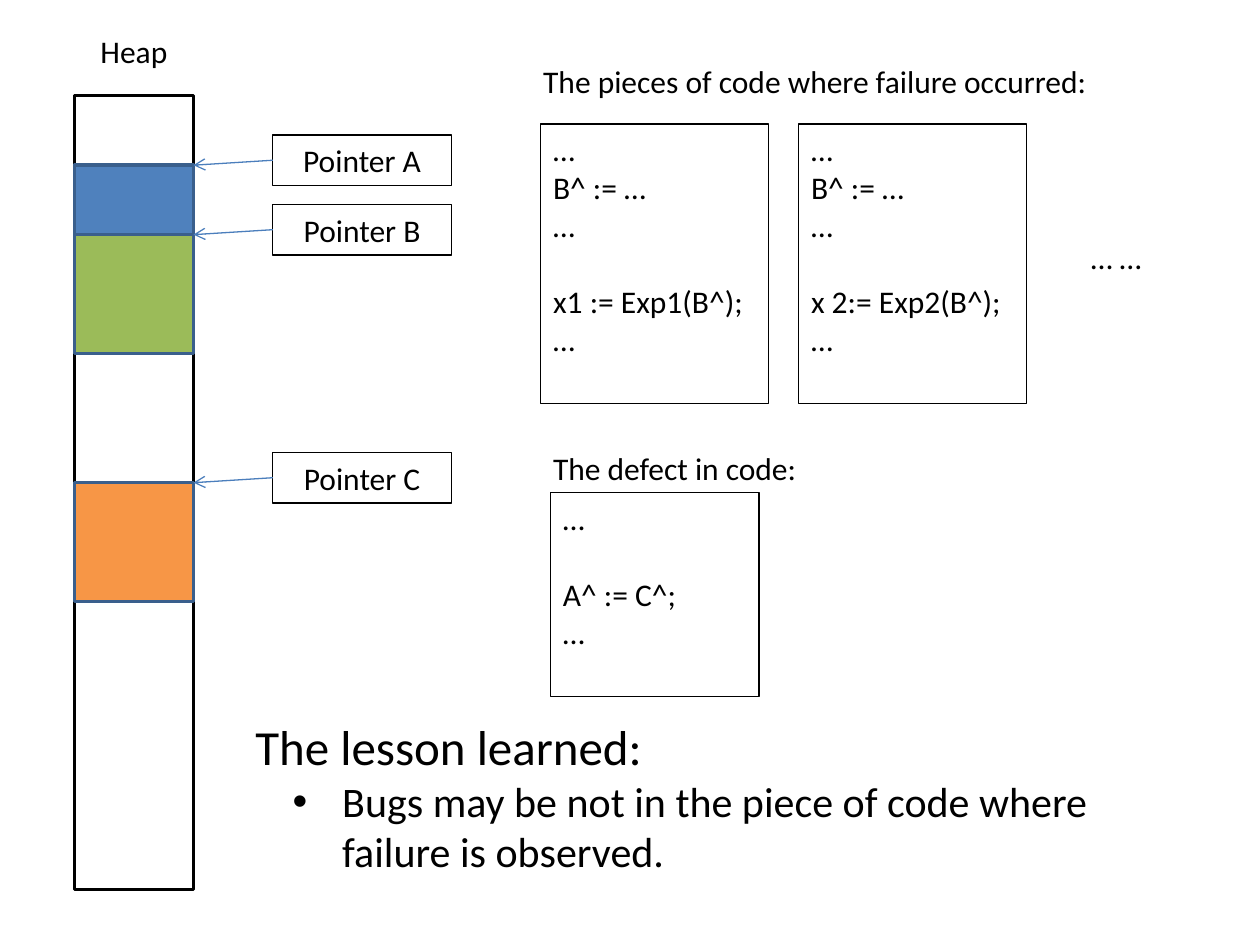
"""Build a slide on heap pointers and where a defect really sits."""
import pptx
import pptx.dml.color
import pptx.enum.shapes
import pptx.enum.text
import pptx.oxml.ns
import pptx.util
from dataclasses import dataclass
from lxml import etree


@dataclass(frozen=True)
class Theme:
    font: str = "Calibri"
    body: int = 18
    heading: int = 28
    bullet: int = 24
    blank_line: int = 22
    ink: str = "000000"
    paper: str = "FFFFFF"
    block_edge: str = "3A5F8C"
    arrow: str = "4B7EBC"
    thin: float = 0.75
    thick: float = 2


THEME = Theme()
WIDTH, HEIGHT = pptx.util.Inches(10), pptx.util.Inches(7.5)
COLUMNS = 254
UNIT = WIDTH / COLUMNS

HEAP = (15, 19.3, 24, 160)
BLOCKS = [
    ("Pointer A", 14, 14, "4F81BD"),
    ("Pointer B", 28, 24, "9BBB59"),
    ("Pointer C", 78, 24, "F79646"),
]
POINTER_LEFT, POINTER_WIDTH, LINE_HEIGHT, POINTER_RISE = 55, 36, 10.2, 6.1

LABELS = [
    ("Heap", 15, 5.3, 24, "CENTER"),
    ("The pieces of code where failure occurred:", 107, 11.2, 120, "LEFT"),
    ("… …", 213, 46.7, 24, "CENTER"),
    ("The defect in code:", 109, 89.2, 120, "LEFT"),
]
FAILURES = [
    [["…", "B^ := …", "…"], ["x1 := Exp1(B^);", "…"]],
    [["…", "B^ := …", "…"], ["x 2:= Exp2(B^);", "…"]],
]
FAILURE_BOX, FAILURE_PITCH = (109, 25, 46, 56.4), 52
DEFECT = [["…"], ["A^ := C^;", "…"]]
DEFECT_BOX = (111, 99.3, 42, 41.1)
LESSON = "The lesson learned:"
LESSON_POINT = "Bugs may be not in the piece of code where failure is observed."
LESSON_BOX = (49, 143.2, 190, 35)
BULLET_MARGIN, BULLET_HANG = 17.5, 10


def grid(*cells):
    return [pptx.util.Emu(round(cell * UNIT)) for cell in cells]


def color(value):
    return pptx.dml.color.RGBColor.from_string(value)


def add_box(slide, place, fill=None, line=THEME.ink, width=THEME.thin):
    shape = slide.shapes.add_shape(pptx.enum.shapes.MSO_SHAPE.RECTANGLE, *grid(*place))
    shape.shadow.inherit = False
    if fill:
        shape.fill.solid()
        shape.fill.fore_color.rgb = color(fill)
    else:
        shape.fill.background()
    shape.line.color.rgb = color(line)
    shape.line.width = pptx.util.Pt(width)
    return shape


def add_text_box(slide, place):
    return slide.shapes.add_textbox(*grid(*place))


def write(shape, text, size=THEME.body, align="LEFT", before=0):
    frame = shape.text_frame
    frame.word_wrap = True
    frame.vertical_anchor = pptx.enum.text.MSO_ANCHOR.TOP
    paragraph = frame.add_paragraph() if frame.text else frame.paragraphs[0]
    paragraph.alignment = getattr(pptx.enum.text.PP_ALIGN, align)
    paragraph.space_before = pptx.util.Pt(before)
    run = paragraph.add_run()
    run.text = text
    run.font.name = THEME.font
    run.font.size = pptx.util.Pt(size)
    run.font.color.rgb = color(THEME.ink)
    return paragraph


def write_code(shape, groups):
    for group_index, group in enumerate(groups):
        for line_index, line in enumerate(group):
            starts_group = group_index > 0 and line_index == 0
            write(shape, line, before=THEME.blank_line if starts_group else 0)


def add_arrow(slide, start, end):
    connector = slide.shapes.add_connector(
        pptx.enum.shapes.MSO_CONNECTOR.STRAIGHT, *grid(*start, *end))
    connector.line.color.rgb = color(THEME.arrow)
    connector.line.width = pptx.util.Pt(THEME.thin)
    qn = pptx.oxml.ns.qn
    etree.SubElement(connector.line._get_or_add_ln(), qn("a:tailEnd"), type="arrow")
    etree.SubElement(connector._element.spPr, qn("a:effectLst"))


def add_bullet(paragraph):
    paragraph.level = 1
    properties = paragraph._p.get_or_add_pPr()
    margin, hang = grid(BULLET_MARGIN, BULLET_HANG)
    properties.set("marL", str(margin))
    properties.set("indent", str(-hang))
    qn = pptx.oxml.ns.qn
    etree.SubElement(properties, qn("a:buFont"), typeface="Arial")
    etree.SubElement(properties, qn("a:buChar"), char="•")


def add_heap(slide):
    left, top, width, _ = HEAP
    add_box(slide, HEAP, fill=THEME.paper, width=THEME.thick)
    for name, offset, height, fill in BLOCKS:
        block_top = top + offset
        add_box(slide, (left, block_top, width, height), fill, THEME.block_edge, THEME.thick)
        pointer_top = block_top - POINTER_RISE
        pointer = add_box(slide, (POINTER_LEFT, pointer_top, POINTER_WIDTH, LINE_HEIGHT))
        write(pointer, name, align="CENTER")
        add_arrow(slide, (POINTER_LEFT, pointer_top + LINE_HEIGHT / 2),
                  (left + width, block_top))


def main():
    presentation = pptx.Presentation()
    presentation.slide_width, presentation.slide_height = WIDTH, HEIGHT
    slide = presentation.slides.add_slide(presentation.slide_layouts[6])
    add_heap(slide)
    for text, left, top, width, align in LABELS:
        write(add_text_box(slide, (left, top, width, LINE_HEIGHT)), text, align=align)
    left, top, width, height = FAILURE_BOX
    for index, code in enumerate(FAILURES):
        place = (left + index * FAILURE_PITCH, top, width, height)
        write_code(add_box(slide, place), code)
    write_code(add_box(slide, DEFECT_BOX), DEFECT)
    lesson = add_text_box(slide, LESSON_BOX)
    write(lesson, LESSON, size=THEME.heading)
    add_bullet(write(lesson, LESSON_POINT, size=THEME.bullet))
    presentation.save("out.pptx")


if __name__ == "__main__":
    main()
